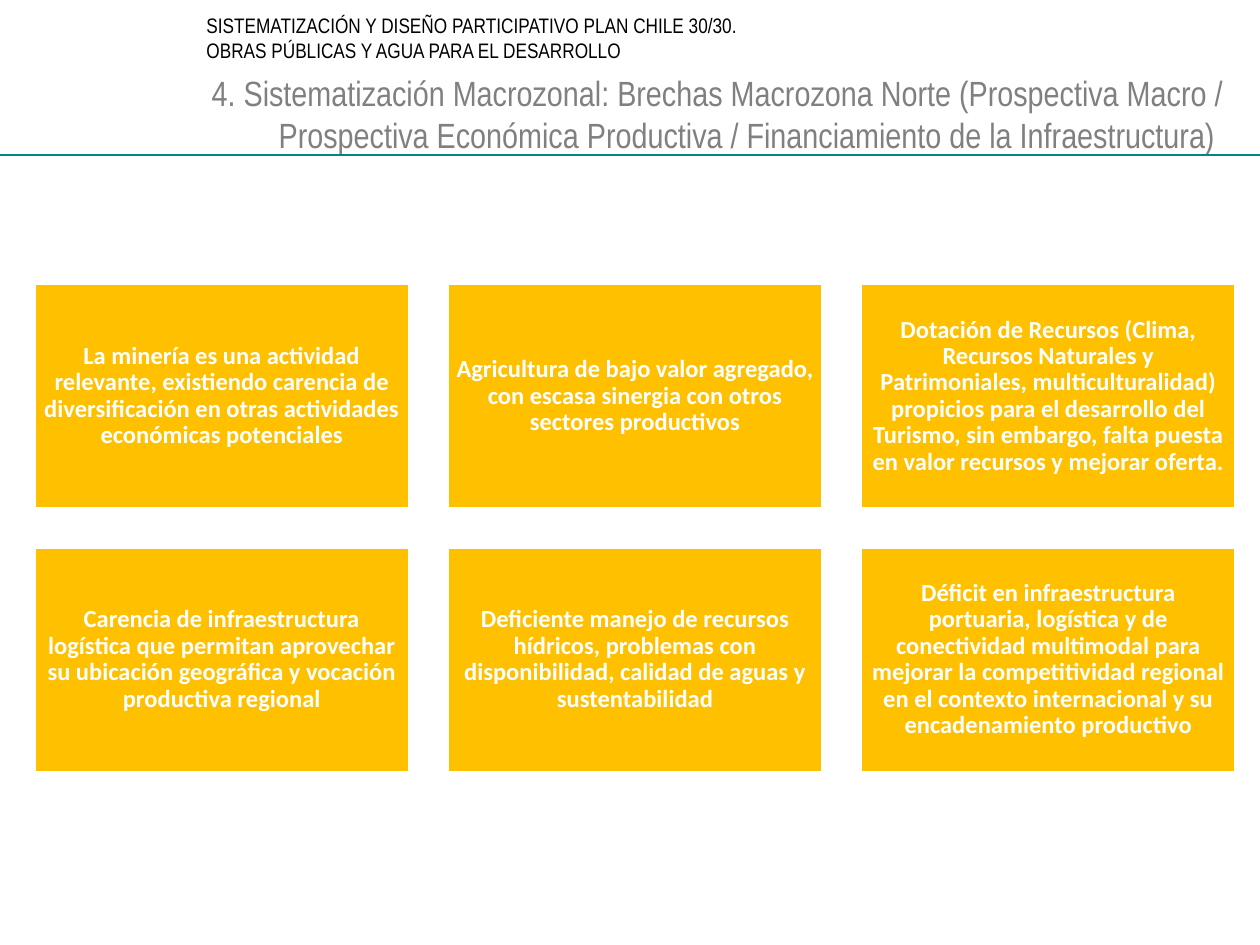
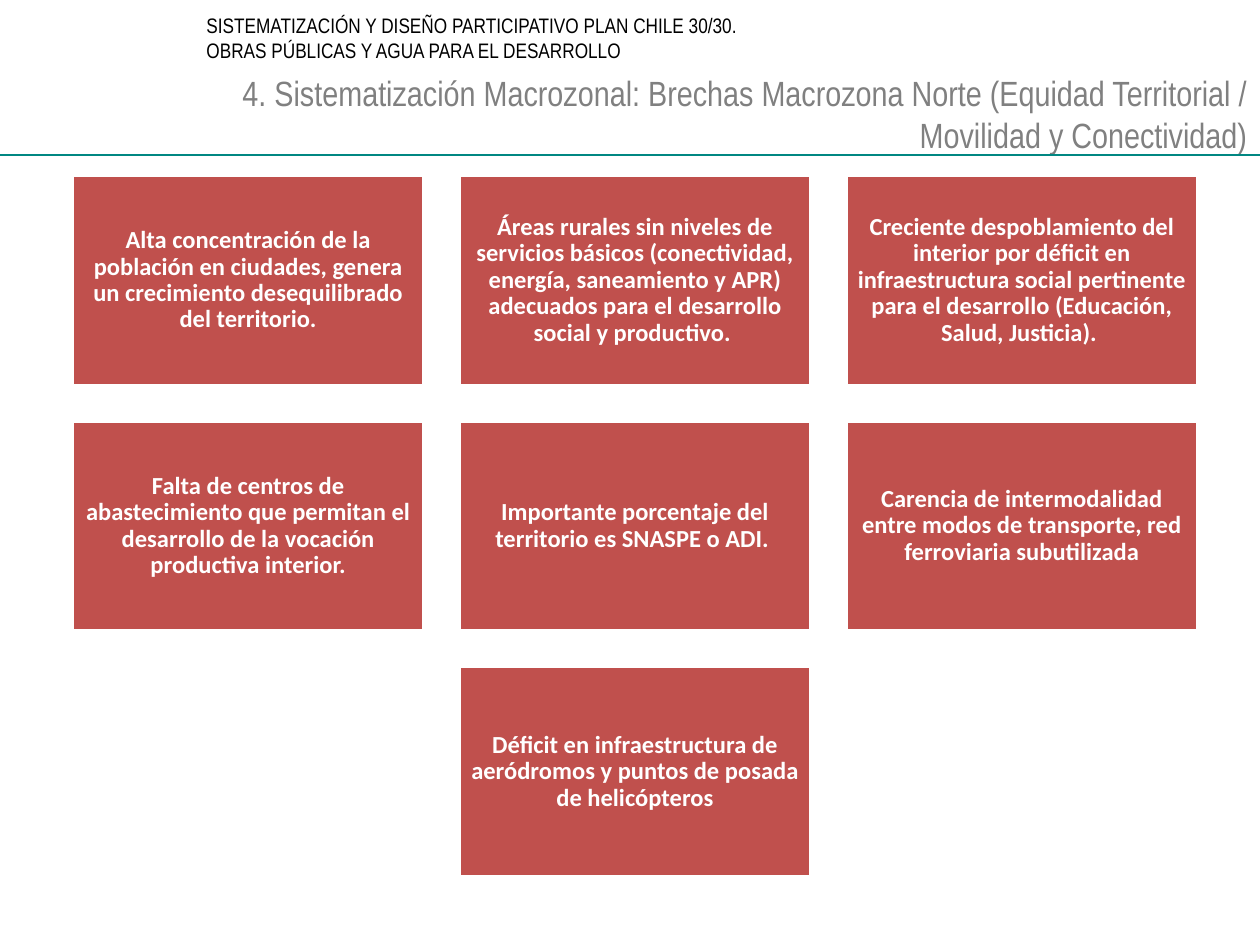
import pptx
import pptx.util
import pptx.dml.color
import pptx.enum.shapes
import pptx.enum.text
import pptx.oxml.ns
import lxml.etree

Inches = pptx.util.Inches
Align = pptx.enum.text.PP_ALIGN
Anchor = pptx.enum.text.MSO_ANCHOR

COLORS = {
    "rule": "008782",
    "header": "000000",
    "title": "808080",
    "white": "FFFFFF",
    "productive": "FFC000",
    "territorial": "C0504D",
}
HEADING_FONT = "Arial Narrow"
BODY_FONT = "Calibri"
HEADER = (
    "SISTEMATIZACIÓN Y DISEÑO PARTICIPATIVO PLAN CHILE 30/30. "
    "OBRAS PÚBLICAS Y AGUA PARA EL DESARROLLO"
)
COLUMNS = 3
GRID_CENTER = 5.04

PRODUCTIVE_TITLE = (
    "4. Sistematización Macrozonal: Brechas Macrozona Norte (Prospectiva Macro / "
    "Prospectiva Económica Productiva / Financiamiento de la Infraestructura) "
)
PRODUCTIVE_GAPS = [
    "La minería es una actividad relevante, existiendo carencia de "
    "diversificación en otras actividades económicas potenciales",
    "Agricultura de bajo valor agregado, con escasa sinergia con otros "
    "sectores productivos",
    "Dotación de Recursos (Clima, Recursos Naturales y Patrimoniales, "
    "multiculturalidad) propicios para el desarrollo del Turismo, sin embargo, "
    "falta puesta en valor recursos y mejorar oferta.",
    "Carencia de infraestructura logística que permitan aprovechar su "
    "ubicación geográfica y vocación productiva regional",
    "Deficiente manejo de recursos hídricos, problemas con disponibilidad, "
    "calidad de aguas y sustentabilidad",
    "Déficit en infraestructura portuaria, logística y de conectividad "
    "multimodal para mejorar la competitividad regional en el contexto "
    "internacional y su encadenamiento productivo",
]
TERRITORIAL_TITLE = (
    "4. Sistematización Macrozonal: Brechas Macrozona Norte "
    "(Equidad Territorial / Movilidad y Conectividad)"
)
TERRITORIAL_GAPS = [
    "Alta concentración de la población en ciudades, genera un crecimiento "
    "desequilibrado del territorio.",
    "Áreas rurales sin niveles de servicios básicos (conectividad, energía, "
    "saneamiento y APR) adecuados para el desarrollo social y productivo. ",
    "Creciente despoblamiento del interior por déficit en infraestructura "
    "social pertinente para el desarrollo (Educación, Salud, Justicia). ",
    "Falta de centros de abastecimiento que permitan el desarrollo de la "
    "vocación productiva interior.",
    "Importante porcentaje del territorio es SNASPE o ADI. ",
    "Carencia de intermodalidad entre modos de transporte, red ferroviaria "
    "subutilizada",
    "Déficit en infraestructura de aeródromos y puntos de posada de helicópteros",
]


def color(name):
    return pptx.dml.color.RGBColor.from_string(COLORS[name])


def write_text(shape, text, font, size, color_name, align, anchor, bold=False):
    frame = shape.text_frame
    frame.word_wrap = True
    frame.auto_size = pptx.enum.text.MSO_AUTO_SIZE.NONE
    frame.vertical_anchor = anchor
    para = frame.paragraphs[0]
    para.alignment = align
    span = para.add_run()
    span.text = text
    span.font.name = font
    span.font.size = pptx.util.Pt(size)
    span.font.bold = bold
    span.font.color.rgb = color(color_name)
    return para


def add_rule(page):
    rule = page.shapes.add_connector(
        pptx.enum.shapes.MSO_CONNECTOR.STRAIGHT,
        Inches(0), Inches(1.23), Inches(10), Inches(1.23),
    )
    rule.line.color.rgb = color("rule")
    rule.line.width = pptx.util.Pt(0.75)
    properties = rule.element.find(pptx.oxml.ns.qn("p:spPr"))
    lxml.etree.SubElement(properties, pptx.oxml.ns.qn("a:effectLst"))


def add_header(page):
    box = page.shapes.add_textbox(Inches(1.54), Inches(0.05), Inches(4.8), Inches(0.5))
    write_text(box, HEADER, HEADING_FONT, 12, "header", Align.LEFT, Anchor.TOP)


def set_title(page, text, left, width):
    title = page.shapes.title
    title.left, title.top = Inches(left), Inches(0.52)
    title.width, title.height = Inches(width), Inches(0.63)
    para = write_text(title, text, HEADING_FONT, 20, "title", Align.RIGHT, Anchor.TOP)
    para.space_before = pptx.util.Pt(0)


def add_page(deck, title, left, width):
    page = deck.slides.add_slide(deck.slide_layouts[5])
    add_rule(page)
    add_header(page)
    set_title(page, title, left, width)
    return page


def add_gap_box(page, text, left, top, width, height, fill):
    box = page.shapes.add_shape(
        pptx.enum.shapes.MSO_SHAPE.RECTANGLE,
        Inches(left), Inches(top), Inches(width), Inches(height),
    )
    box.shadow.inherit = False
    box.fill.solid()
    box.fill.fore_color.rgb = color(fill)
    box.line.color.rgb = color("white")
    box.line.width = pptx.util.Pt(2)
    frame = box.text_frame
    frame.margin_left = frame.margin_right = Inches(0.06)
    frame.margin_top = frame.margin_bottom = Inches(0.06)
    para = write_text(
        box, text, BODY_FONT, 14, "white", Align.CENTER, Anchor.MIDDLE, bold=True
    )
    para.line_spacing = 0.9


def add_gap_grid(page, texts, top, width, height, spacing, fill):
    for start in range(0, len(texts), COLUMNS):
        row = texts[start:start + COLUMNS]
        row_width = len(row) * (width + spacing) - spacing
        row_left = GRID_CENTER - row_width / 2
        row_top = top + start // COLUMNS * (height + spacing)
        for column, text in enumerate(row):
            left = row_left + column * (width + spacing)
            add_gap_box(page, text, left, row_top, width, height, fill)


def main():
    deck = pptx.Presentation()
    deck.slide_width, deck.slide_height = Inches(10), Inches(7.5)

    page = add_page(deck, PRODUCTIVE_TITLE, 0.91, 8.9)
    add_gap_grid(page, PRODUCTIVE_GAPS, 2.25, 2.98, 1.79, 0.3, "productive")

    page = add_page(deck, TERRITORIAL_TITLE, 1.46, 8.54)
    add_gap_grid(page, TERRITORIAL_GAPS, 1.39, 2.79, 1.67, 0.28, "territorial")

    deck.save("out.pptx")


if __name__ == "__main__":
    main()
